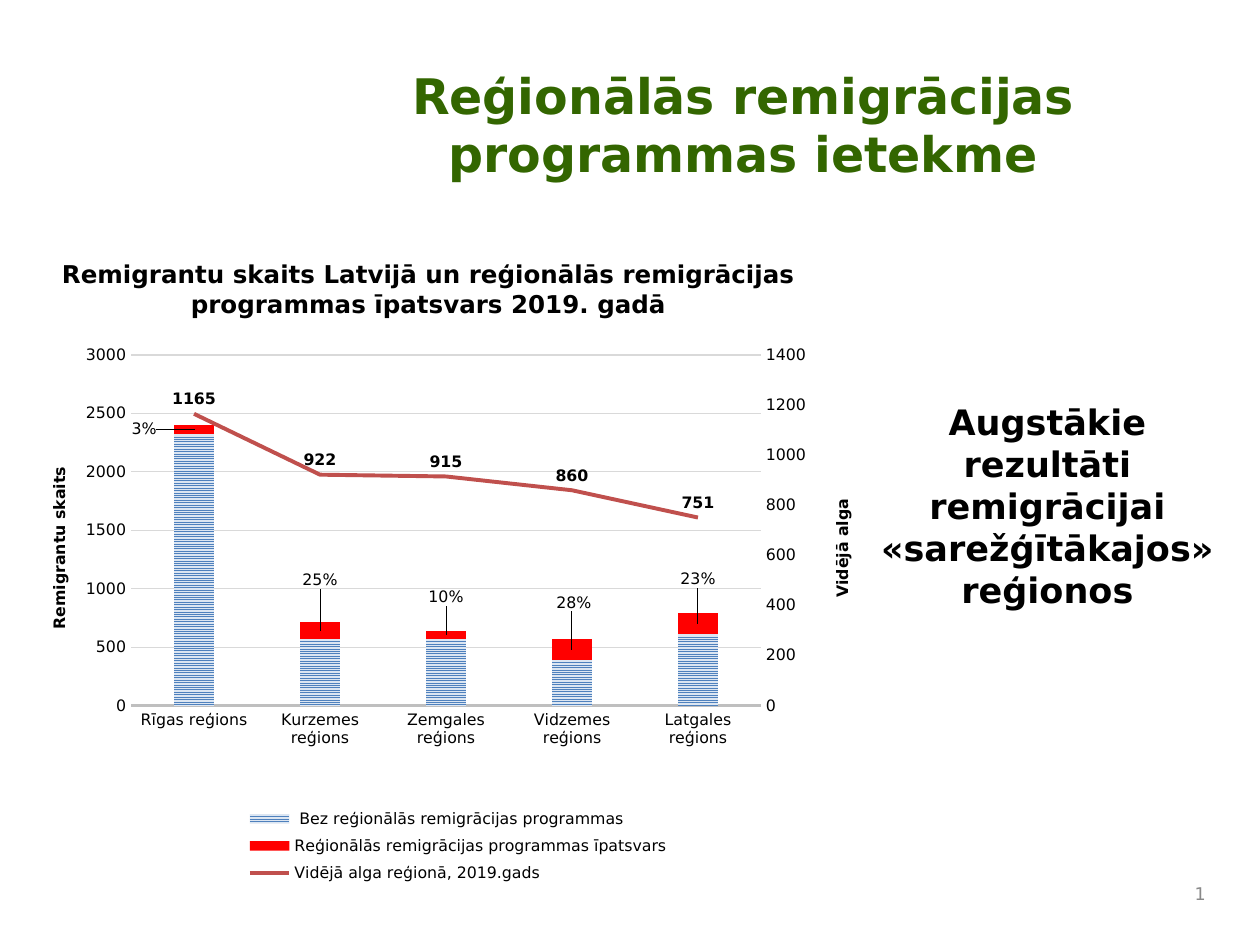
from copy import deepcopy
from pptx import Presentation
from pptx.chart.axis import CategoryAxis, ValueAxis
from pptx.chart.data import CategoryChartData
from pptx.dml.color import RGBColor
from pptx.enum.chart import (XL_CHART_TYPE, XL_LABEL_POSITION, XL_LEGEND_POSITION,
                             XL_MARKER_STYLE, XL_TICK_MARK)
from pptx.enum.dml import MSO_PATTERN
from pptx.enum.text import MSO_ANCHOR, MSO_AUTO_SIZE, PP_ALIGN
from pptx.oxml import parse_xml
from pptx.oxml.ns import nsdecls, qn
from pptx.util import Inches, Pt

STACKED = XL_CHART_TYPE.COLUMN_STACKED
ABOVE = XL_LABEL_POSITION.ABOVE
BOTTOM = XL_LEGEND_POSITION.BOTTOM
NO_MARK = XL_MARKER_STYLE.NONE
NO_TICK = XL_TICK_MARK.NONE
STRIPES = MSO_PATTERN.NARROW_HORIZONTAL
MIDDLE, TOP = MSO_ANCHOR.MIDDLE, MSO_ANCHOR.TOP
GROW = MSO_AUTO_SIZE.SHAPE_TO_FIT_TEXT
CENTER, RIGHT = PP_ALIGN.CENTER, PP_ALIGN.RIGHT

FACE = "DejaVu Sans"
BLACK = "000000"
SCALE = 914400 / 126
CHART_BOX = (18, 325, 862, 588)
REGIONS = ["Rīgas reģions", "Kurzemes reģions", "Zemgales reģions",
           "Vidzemes reģions", "Latgales reģions"]
SERIES = [
    (" Bez reģionālās remigrācijas programmas", [2320, 570, 570, 390, 610]),
    ("Reģionālās remigrācijas programmas īpatsvars", [83, 142, 70, 178, 183]),
    ("Vidējā alga reģionā, 2019.gads", [1165, 922, 915, 860, 751]),
]
SHARES = [("3%", -50, 0), ("25%", 0, -51), ("10%", 0, -38),
          ("28%", 2, -47), ("23%", 0, -45)]


def px(n):
    """Turn pixels into EMU."""
    return round(n * SCALE)


def paint(color, code):
    """Set a colour format from a hex string."""
    color.rgb = RGBColor.from_string(code)


def style(font, size, code=BLACK, bold=False):
    """Set face, size, colour and weight of a font."""
    font.name, font.size, font.bold = FACE, Pt(size), bold
    paint(font.color, code)


def stroke(line, code, width):
    """Give a line its colour and width."""
    line.width = Pt(width)
    paint(line.color, code)


def write(shape, text, size, code=BLACK, bold=True, align=CENTER, anchor=TOP):
    """Write one styled run into a shape."""
    frame = shape.text_frame
    frame.word_wrap, frame.vertical_anchor = True, anchor
    para = frame.paragraphs[0]
    para.alignment = align
    run = para.add_run()
    run.text = text
    style(run.font, size, code, bold)
    return para


def add_title(slide, text, box):
    """Move and fill the title placeholder."""
    title = slide.shapes.title
    title.left, title.top, title.width, title.height = map(px, box)
    write(title, text, 28, "336600", anchor=MIDDLE)


def add_text(slide, text, box, size, after=0):
    """Add a bold centred text box."""
    shape = slide.shapes.add_textbox(*map(px, box))
    write(shape, text, size).space_after = Pt(after)
    shape.text_frame.auto_size = GROW


def add_number(slide, text, box):
    """Add the slide number as a live field."""
    shape = slide.shapes.add_textbox(*map(px, box))
    para = write(shape, text, 10, "898989", False, RIGHT, MIDDLE)
    run = para.runs[0]._r
    field = parse_xml(f'<a:fld {nsdecls("a")} type="slidenum" '
                      'id="{B6F15528-21DE-4FAA-801E-634DDDAF4B2B}"/>')
    run.addprevious(field)
    field.extend(list(run))
    para._p.remove(run)


def place(node, index, x, y, size=None, inner=False, edge=True):
    """Give a chart part a manual layout in pixels of the chart box."""
    wide, high = CHART_BOX[2:]
    items = [("layoutTarget", "inner")] if inner else []
    if edge:
        items += [("xMode", "edge"), ("yMode", "edge")]
    items += [("x", round(x / wide, 4)), ("y", round(y / high, 4))]
    if size:
        items += [("w", round(size[0] / wide, 4)), ("h", round(size[1] / high, 4))]
    body = "".join(f'<c:{tag} val="{val}"/>' for tag, val in items)
    for old in node.findall(qn("c:layout")):
        node.remove(old)
    node.insert(index, parse_xml(f'<c:layout {nsdecls("c")}><c:manualLayout>{body}'
                                 '</c:manualLayout></c:layout>'))


def name_axis(axis, text, x, y):
    """Give an axis a bold title at a fixed place."""
    frame = axis.axis_title.text_frame
    frame.text = text
    style(frame.paragraphs[0].runs[0].font, 9, bold=True)
    place(axis.axis_title._element, 1, x, y)


def set_scale(axis, top, step):
    """Fix the range and step of a value axis."""
    axis.minimum_scale, axis.maximum_scale, axis.major_unit = 0, top, step


def set_axes(chart):
    """Format the category axis and the left value axis."""
    cat, val = chart.category_axis, chart.value_axis
    for axis in (cat, val):
        axis.major_tick_mark = axis.minor_tick_mark = NO_TICK
        style(axis.tick_labels.font, 9)
    stroke(cat.format.line, "BFBFBF", 1.5)
    val.format.line.fill.background()
    stroke(val.major_gridlines.format.line, "D9D9D9", 0.75)
    val.tick_labels.number_format = "0"
    val.tick_labels.number_format_is_linked = False
    set_scale(val, 3000, 500)
    name_axis(val, "Remigrantu skaits", 28, 139)


def split_line(chart):
    """Move the last series to a line plot on a right axis."""
    bars = chart.plots[0]._element
    ser = bars.findall(qn("c:ser"))[-1]
    for flag in ser.findall(qn("c:invertIfNegative")):
        ser.remove(flag)
    line = parse_xml(f'<c:lineChart {nsdecls("c")}><c:grouping val="standard"/>'
                     '<c:varyColors val="0"/><c:marker val="1"/>'
                     '<c:axId val="501"/><c:axId val="502"/></c:lineChart>')
    line.insert(2, ser)
    bars.addnext(line)
    cat = deepcopy(chart.category_axis._element)
    val = deepcopy(chart.value_axis._element)
    chart.value_axis._element.addnext(val)
    val.addnext(cat)
    for node, own, other in ((cat, "501", "502"), (val, "502", "501")):
        node.find(qn("c:axId")).set("val", own)
        node.find(qn("c:crossAx")).set("val", other)
    val.find(qn("c:axPos")).set("val", "r")
    val.find(qn("c:crosses")).set("val", "max")
    CategoryAxis(cat).visible = False
    right = ValueAxis(val)
    right.has_major_gridlines = False
    set_scale(right, 1400, 200)
    name_axis(right, "Vidējā alga", 811, 171)


def set_bars(plot):
    """Format the stacked bars and their share labels."""
    plot.gap_width, plot.overlap, plot.vary_by_categories = 219, 100, False
    base, share = plot.series
    fill = base.format.fill
    fill.patterned()
    fill.pattern = STRIPES
    paint(fill.fore_color, "4F81BD")
    paint(fill.back_color, "DCE6F2")
    share.format.fill.solid()
    paint(share.format.fill.fore_color, "FF0000")
    labels = share.data_labels
    labels.show_value = True
    style(labels.font, 9, bold=True)
    for i, (text, _, _) in enumerate(SHARES):
        frame = share.points[i].data_label.text_frame
        frame.text = text
        style(frame.paragraphs[0].runs[0].font, 9)
    nodes = labels._element.findall(qn("c:dLbl"))
    for node, (_, x, y) in zip(nodes, SHARES):
        place(node, 1, x, y, edge=False)


def set_line(plot):
    """Format the wage line and its labels."""
    wage = plot.series[0]
    wage.smooth = False
    wage.marker.style = NO_MARK
    stroke(wage.format.line, "C0504D", 2.25)
    labels = wage.data_labels
    labels.show_value, labels.position = True, ABOVE
    style(labels.font, 9, bold=True)


def add_chart(slide):
    """Add the combined bar and line chart."""
    data = CategoryChartData()
    data.categories = REGIONS
    for name, vals in SERIES:
        data.add_series(name, vals)
    chart = slide.shapes.add_chart(STACKED, *map(px, CHART_BOX), data).chart
    chart.has_title = False
    style(chart.font, 10)
    set_axes(chart)
    split_line(chart)
    set_bars(chart.plots[0])
    set_line(chart.plots[1])
    chart.has_legend = True
    legend = chart.legend
    legend.position, legend.include_in_layout = BOTTOM, False
    style(legend.font, 9)
    place(legend._element, 1, 225, 476, (430, 90))
    place(chart._chartSpace.chart.plotArea, 0, 113, 30, (630, 351), inner=True)


def main():
    """Build and save the slide."""
    deck = Presentation()
    deck.slide_width, deck.slide_height = Inches(10), Inches(7.5)
    slide = deck.slides.add_slide(deck.slide_layouts[5])
    add_title(slide, "Reģionālās remigrācijas programmas ietekme", (243, 53, 1000, 142))
    add_number(slide, "8", (1121, 872, 97, 42))
    add_text(slide, "Remigrantu skaits Latvijā un reģionālās remigrācijas "
             "programmas īpatsvars 2019. gadā", (28, 253, 801, 72), 14, 6)
    add_text(slide, "Augstākie rezultāti remigrācijai «sarežģītākajos» reģionos",
             (852, 394, 391, 224), 20)
    add_chart(slide)
    deck.save("out.pptx")


if __name__ == "__main__":
    main()
